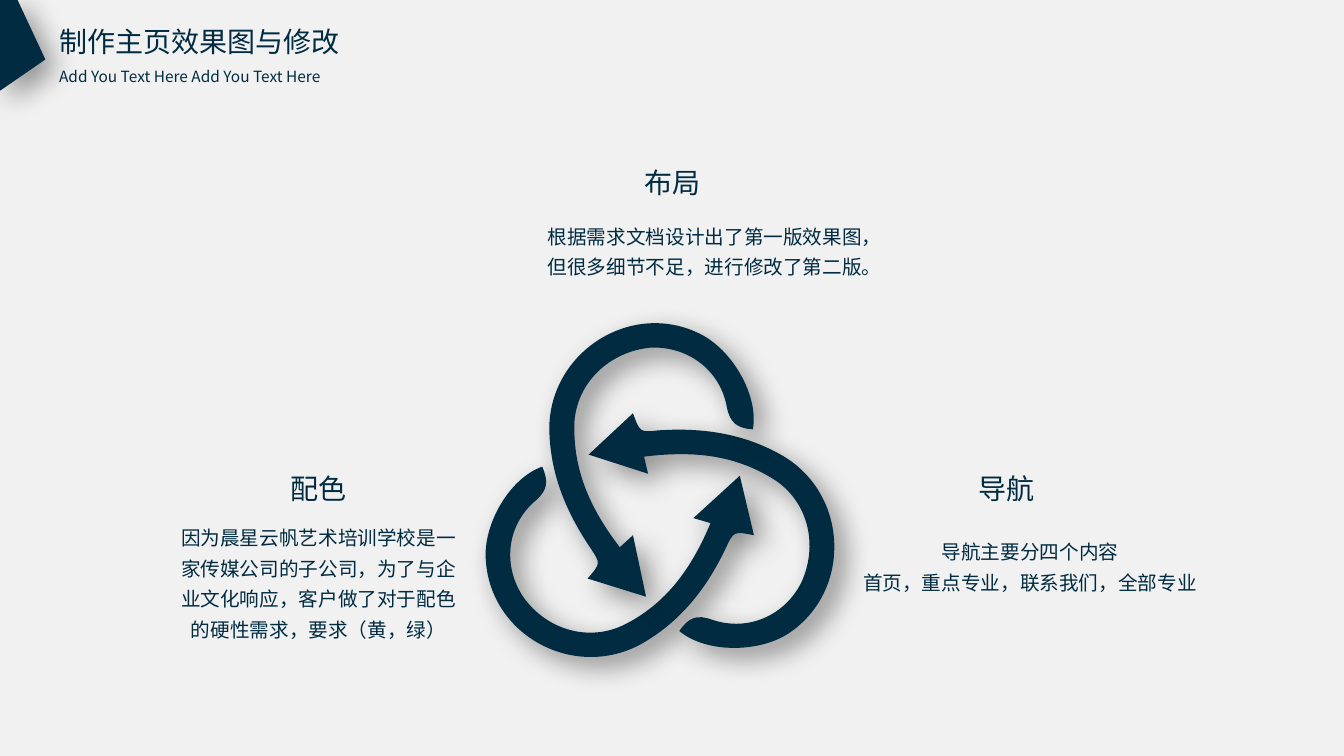
from dataclasses import dataclass
from math import cos, radians, sin

from lxml import etree
from pptx import Presentation
from pptx.dml.color import RGBColor
from pptx.enum.text import MSO_ANCHOR, MSO_AUTO_SIZE, PP_ALIGN
from pptx.oxml.ns import qn
from pptx.util import Cm, Pt

LEFT, MID = PP_ALIGN.LEFT, PP_ALIGN.CENTER
TOP, GROW = MSO_ANCHOR.TOP, MSO_AUTO_SIZE.SHAPE_TO_FIT_TEXT


@dataclass(frozen=True)
class Theme:
    ink: RGBColor = RGBColor(0x00, 0x2B, 0x41)
    back: RGBColor = RGBColor(0xF1, 0xF1, 0xF1)
    font: str = "Noto Sans CJK SC"
    head: Pt = Pt(20)
    body: Pt = Pt(14)
    note: Pt = Pt(11)


theme = Theme()


def write(box, lines, size, align=MID, space=1.0, wrap=True):
    """Fill a box with one paragraph per line."""
    frame = box.text_frame
    frame.text = "\n".join(lines)
    look = {"word_wrap": wrap, "auto_size": GROW, "vertical_anchor": TOP}
    for name, value in look.items():
        setattr(frame, name, value)
    for para in frame.paragraphs:
        para.alignment, para.line_spacing = align, space
        font = para.runs[0].font
        font.name, font.size = theme.font, size
        font.color.rgb = theme.ink
        east = etree.SubElement(para.runs[0]._r.get_or_add_rPr(), qn("a:ea"))
        east.set("typeface", theme.font)


def draw(steps, mid=(0, 0), turn=0):
    """Draw an outline about mid: a step of one point is a line, of three a curve."""
    c, s = cos(radians(turn)), sin(radians(turn))
    dots = [(mid[0] + x * c - y * s, mid[1] + x * s + y * c)
            for step in steps for x, y in zip(step[::2], step[1::2])]
    pen = slide.shapes.build_freeform(*dots[0], scale=Cm(2.54) / 100)
    pen.add_line_segments(dots[1:], close=True)
    shape = pen.convert_to_shape()
    shape.fill.solid()
    shape.fill.fore_color.rgb = theme.ink
    shape.line.fill.background()
    shape.shadow.inherit = False
    props = shape._element.spPr

    # Join the three points of each curve into one Bezier
    legs = iter(list(props.iter(qn("a:lnTo"))))
    for step in steps[1:]:
        group = [next(legs) for _ in step[::2]]
        if len(group) == 3:
            bend = etree.Element(qn("a:cubicBezTo"))
            group[0].addprevious(bend)
            for leg in group:
                bend.append(leg[0])
                leg.getparent().remove(leg)

    # Soft shadow to the lower right
    cast = etree.SubElement(props.find(qn("a:effectLst")), qn("a:outerShdw"),
                            blurRad=str(Pt(20)), dist=str(Pt(10)),
                            dir=str(45 * 60000), algn="tl", rotWithShape="0")
    tint = etree.SubElement(cast, qn("a:srgbClr"), val="000000")
    etree.SubElement(tint, qn("a:alpha"), val="40000")


# Slide
deck = Presentation()
deck.slide_width, deck.slide_height = Cm(33.87), Cm(19.05)
slide = deck.slides.add_slide(deck.slide_layouts[5])
slide.background.fill.solid()
slide.background.fill.fore_color.rgb = theme.back

# Title and subtitle
title = slide.shapes.title
title.left, title.top, title.width, title.height = map(Cm, (1.24, 0.48, 7.65, 1.12))
write(title, ["制作主页效果图与修改"], theme.head, LEFT, wrap=False)
sub = slide.shapes.add_textbox(Cm(1.24), Cm(1.42), Cm(7.77), Cm(0.81))
write(sub, ["Add You Text Here Add You Text Here"], theme.note, LEFT, 1.3)

# Corner mark, in hundredths of an inch
draw([(17, -1), (0, -1), (0, 90), (45, 59)])

# Three woven arrows: one outline turned by thirds about the centre
arrow = [
    (-115, -42),
    (-109, -28, -109, -19, -122, -8),
    (-151, 17, -154, 57, -134, 87),
    (-111, 120, -69, 132, -34, 115),
    (8, 94, 33, 59, 52, 14),
    (35, 9), (81, -33), (95, 26),
    (75, 22, 75, 22, 67, 39),
    (48, 79, 22, 112, -17, 134),
    (-83, 170, -166, 126, -171, 51),
    (-174, 15, -147, -31, -115, -42),
]
for turn in (0, -120, 120):
    draw(arrow, (653, 505), turn)

# Topics: heading, its left and top, body box, body lines
topics = [
    ("导航", 23.5, 11.76, (21.44, 13.31, 9.04, 1.73),
     ["导航主要分四个内容", "首页，重点专业，联系我们，全部专业"]),
    ("配色", 6.17, 11.76, (4.27, 12.95, 7.52, 3.3),
     ["因为晨星云帆艺术培训学校是一家传媒公司的子公司，为了与企业文化响应，"
      "客户做了对于配色的硬性需求，要求（黄，绿）"]),
    ("布局", 15.09, 4.04, (13.36, 5.36, 8.81, 1.73),
     ["根据需求文档设计出了第一版效果图，", "但很多细节不足，进行修改了第二版。"]),
]
for name, x, y, area, lines in topics:
    body = slide.shapes.add_textbox(*map(Cm, area))
    write(body, lines, theme.body, space=1.3)
    head = slide.shapes.add_textbox(Cm(x), Cm(y), Cm(3.71), Cm(1.12))
    write(head, [name], theme.head)

deck.save("out.pptx")
